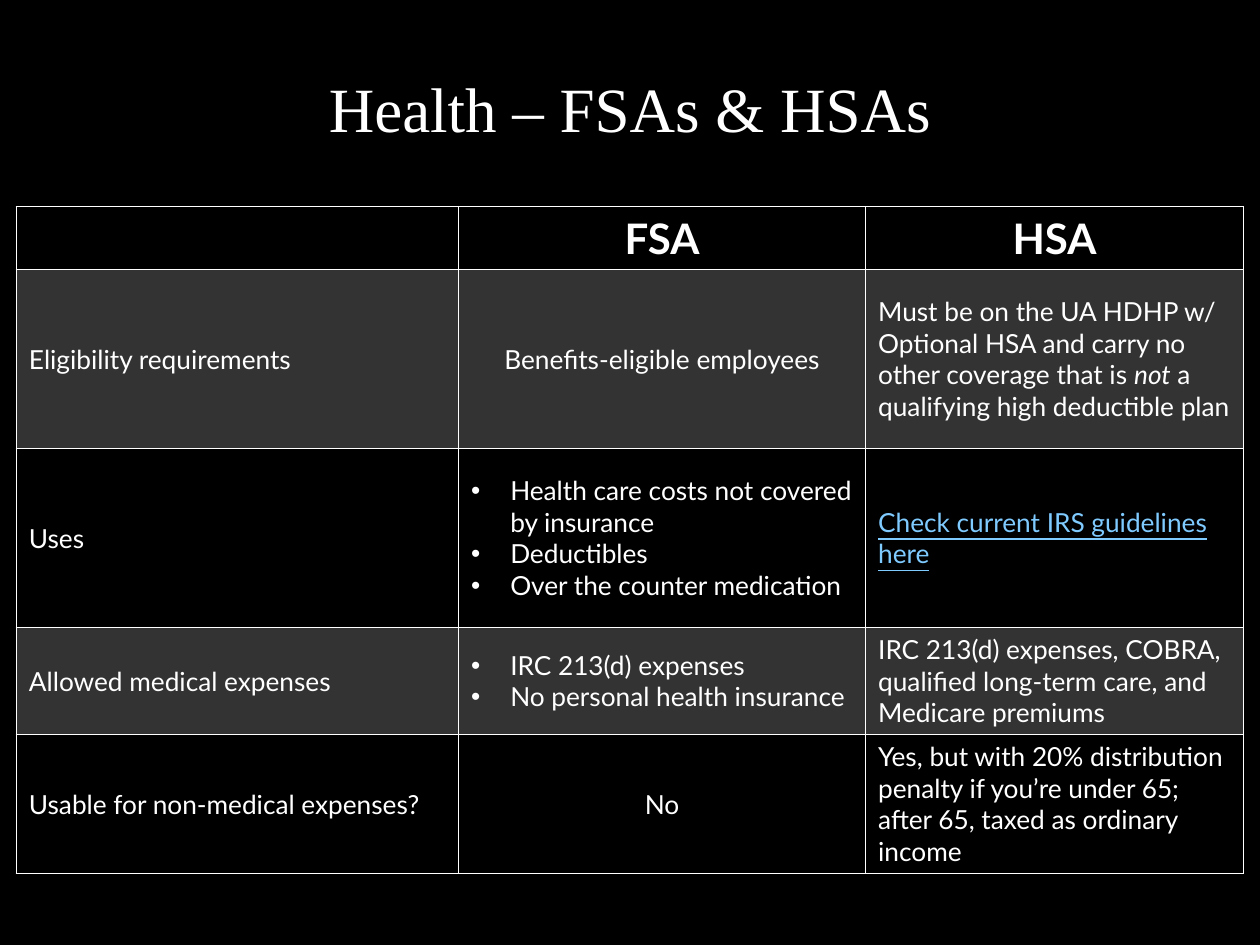
from dataclasses import dataclass

from lxml import etree
from pptx import Presentation
from pptx.dml.color import RGBColor
from pptx.enum.text import MSO_ANCHOR, PP_ALIGN
from pptx.oxml.ns import qn
from pptx.util import Inches, Pt

LEFT, CENTER = PP_ALIGN.LEFT, PP_ALIGN.CENTER
MIDDLE = MSO_ANCHOR.MIDDLE


@dataclass(frozen=True)
class Theme:
    """Colours, fonts and type sizes of the slide."""
    back: str = "000000"
    ink: str = "FFFFFF"
    link: str = "7FCAFF"
    serif: str = "Times New Roman"
    sans: str = "Lato"
    title: int = 36
    head: int = 24
    body: int = 15
    band: int = 20
    rule: int = 1


THEME = Theme()
WIDTH, HEIGHT = 10, 7.5
COLS = (3.51, 3.23, 3)
ROWS = (0.5, 1.42, 1.42, 0.85, 1.1)
INDENT = 0.31

HEADS = ("", "FSA", "HSA")
TOPICS = (
    ("Eligibility requirements", "Benefits-eligible employees",
     [("Must be on the UA HDHP w/ Optional HSA and carry no other coverage that is ", {}),
      ("not", {"italic": True}),
      (" a qualifying high deductible plan", {})]),
    ("Uses",
     ("Health care costs not covered by insurance", "Deductibles",
      "Over the counter medication"),
     [("Check current IRS guidelines here", {"color": THEME.link, "underline": True})]),
    ("Allowed medical expenses",
     ("IRC 213(d) expenses", "No personal health insurance"),
     "IRC 213(d) expenses, COBRA, qualified long-term care, and Medicare premiums"),
    ("Usable for non-medical expenses?", "No",
     "Yes, but with 20% distribution penalty if you’re under 65; "
     "after 65, taxed as ordinary income"),
)


def add_bullet(para):
    """Give a paragraph a hanging bullet."""
    props = para._p.get_or_add_pPr()
    props.set("marL", str(Inches(INDENT)))
    props.set("indent", str(-Inches(INDENT)))
    etree.SubElement(props, qn("a:buFont"), typeface="Arial")
    etree.SubElement(props, qn("a:buChar"), char="•")


def put_text(frame, text, size=THEME.body, face=THEME.sans, align=LEFT, bold=False):
    """Write a string, a list of styled runs or a tuple of bullets."""
    paras = text if isinstance(text, tuple) else (text,)
    for row, item in enumerate(paras):
        para = frame.add_paragraph() if row else frame.paragraphs[0]
        para.alignment = align
        if isinstance(text, tuple):
            add_bullet(para)
        for words, style in item if isinstance(item, list) else [(item, {})]:
            run = para.add_run()
            run.text = words
            font = run.font
            font.name, font.size, font.bold = face, Pt(size), bold
            font.italic = style.get("italic", False)
            font.underline = style.get("underline", False)
            font.color.rgb = RGBColor.from_string(style.get("color", THEME.ink))


def add_rules(cell):
    """Draw a thin line on each side of a cell."""
    props = cell._tc.get_or_add_tcPr()
    for side in ("lnL", "lnR", "lnT", "lnB"):
        line = etree.SubElement(props, qn(f"a:{side}"), w=str(Pt(THEME.rule)))
        fill = etree.SubElement(line, qn("a:solidFill"))
        etree.SubElement(fill, qn("a:srgbClr"), val=THEME.ink)


def fill_cell(cell, band):
    """Tint a banded cell, or leave a plain one clear."""
    if not band:
        cell.fill.background()
        return
    cell.fill.solid()
    cell.fill.fore_color.rgb = RGBColor.from_string(THEME.ink)
    color = cell._tc.tcPr.find(qn("a:solidFill")).find(qn("a:srgbClr"))
    etree.SubElement(color, qn("a:alpha"), val=str(THEME.band * 1000))


def add_title(slide, text):
    """Place the centred title."""
    title = slide.shapes.title
    title.left, title.top = Inches(WIDTH / 9), Inches(HEIGHT * 0.06)
    title.width, title.height = Inches(WIDTH * 7 / 9), Inches(0.8)
    title.text_frame.vertical_anchor = MIDDLE
    put_text(title.text_frame, text, size=THEME.title, face=THEME.serif, align=CENTER)


def add_grid(slide):
    """Build the table that compares the two accounts."""
    wide, high = sum(COLS), sum(ROWS)
    frame = slide.shapes.add_table(
        len(ROWS), len(COLS), Inches((WIDTH - wide) / 2), Inches(1.64),
        Inches(wide), Inches(high))
    table = frame.table
    table.first_row = table.horz_banding = False
    for col, size in zip(table.columns, COLS):
        col.width = Inches(size)
    for row, size in zip(table.rows, ROWS):
        row.height = Inches(size)
    for r, texts in enumerate((HEADS, *TOPICS)):
        for c, text in enumerate(texts):
            cell = table.cell(r, c)
            cell.vertical_anchor = MIDDLE
            add_rules(cell)
            fill_cell(cell, r % 2 == 1)
            if not text:
                continue
            if r == 0:
                put_text(cell.text_frame, text, size=THEME.head, align=CENTER, bold=True)
            else:
                mid = c == 1 and isinstance(text, str)
                put_text(cell.text_frame, text, align=CENTER if mid else LEFT)


def main():
    """Build and save the slide."""
    deck = Presentation()
    deck.slide_width, deck.slide_height = Inches(WIDTH), Inches(HEIGHT)
    slide = deck.slides.add_slide(deck.slide_layouts[5])
    slide.background.fill.solid()
    slide.background.fill.fore_color.rgb = RGBColor.from_string(THEME.back)
    add_title(slide, "Health – FSAs & HSAs")
    add_grid(slide)
    deck.save("out.pptx")


if __name__ == "__main__":
    main()
